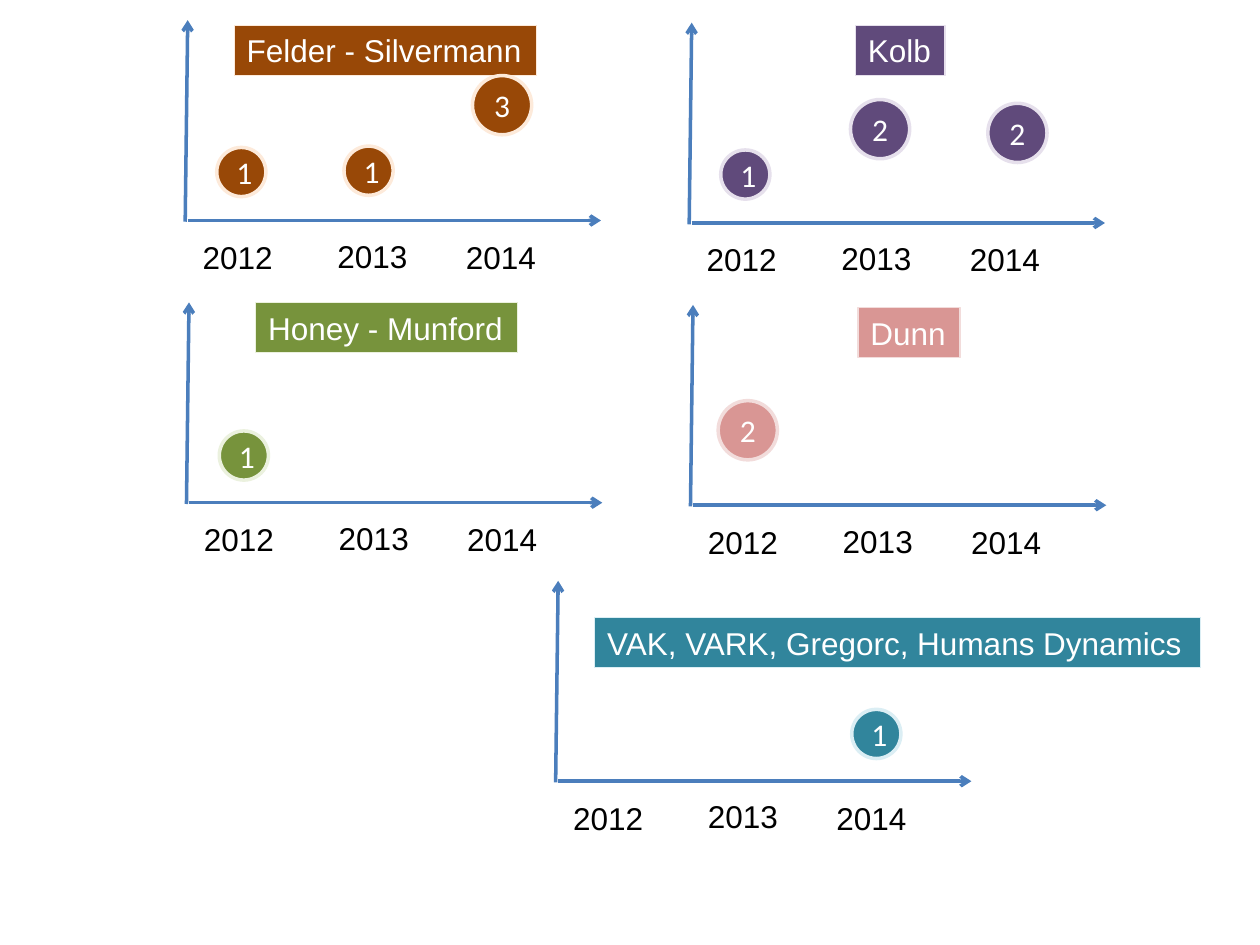
from lxml import etree
from pptx import Presentation
from pptx.dml.color import RGBColor
from pptx.enum.dml import MSO_LINE
from pptx.enum.shapes import MSO_CONNECTOR, MSO_SHAPE
from pptx.enum.text import MSO_ANCHOR, MSO_AUTO_SIZE, PP_ALIGN
from pptx.oxml.ns import qn
from pptx.util import Inches, Pt

STRAIGHT = MSO_CONNECTOR.STRAIGHT
SOLID = MSO_LINE.SOLID
RECTANGLE, OVAL = MSO_SHAPE.RECTANGLE, MSO_SHAPE.OVAL
LEFT, CENTER = PP_ALIGN.LEFT, PP_ALIGN.CENTER
TOP, MIDDLE = MSO_ANCHOR.TOP, MSO_ANCHOR.MIDDLE
GROW = MSO_AUTO_SIZE.SHAPE_TO_FIT_TEXT

AXIS_COLOR = "4B7EBC"
WHITE, BLACK = "FFFFFF", "000000"
LABEL_HEIGHT = 0.4
YEARS = [("2012", 0.04, 1.68), ("2013", 1.11, 1.67), ("2014", 2.13, 1.68)]

# Panel origin; title with its offset and width; fill, outline; bubbles (count, x, y)
PANELS = [
    ((1.47, 0.16), ("Felder - Silvermann", 0.39, 0.04, 2.4), "984807", "FDEADA",
     [(1, 0.25, 1.01), (1, 1.26, 1), (3, 2.28, 0.44)]),
    ((5.47, 0.18), ("Kolb", 1.32, 0.02, 0.71), "604A7B", "E6E0EC",
     [(1, 0.25, 1.01), (2, 1.28, 0.61), (2, 2.37, 0.64)]),
    ((1.48, 2.4), ("Honey - Munford", 0.55, 0, 2.08), "77933C", "EBF1DE",
     [(1, 0.26, 1.02)]),
    ((5.48, 2.42), ("Dunn", 1.33, 0.02, 0.81), "D99694", "F2DCDB",
     [(2, 0.22, 0.76)]),
    ((4.41, 4.61), ("VAK, VARK, Gregorc, Humans Dynamics", 0.31, 0.29, 4.81),
     "31859C", "DBEEF4", [(1, 2.35, 1.02)]),
]


def rgb(color):
    return RGBColor.from_string(color)


def write(shape, text, font_name, color, align, anchor):
    frame = shape.text_frame
    frame.text = text
    frame.vertical_anchor = anchor
    para = frame.paragraphs[0]
    para.alignment = align
    font = para.runs[0].font
    font.name, font.size = font_name, Pt(18)
    font.color.rgb = rgb(color)


def fit_to_text(shape):
    shape.text_frame.word_wrap = False
    shape.text_frame.auto_size = GROW


def add_axis(page, start, end):
    axis = page.shapes.add_connector(
        STRAIGHT, *(Inches(value) for value in (*start, *end)))
    axis.line.color.rgb = rgb(AXIS_COLOR)
    axis.line.width = Pt(2)
    axis.line.dash_style = SOLID
    outline = axis.line._get_or_add_ln()
    etree.SubElement(outline, qn("a:tailEnd"), type="arrow")
    etree.SubElement(outline.getparent(), qn("a:effectLst"))


def add_filled(page, kind, box, fill, outline, weight):
    shape = page.shapes.add_shape(kind, *(Inches(value) for value in box))
    shape.shadow.inherit = False
    shape.fill.solid()
    shape.fill.fore_color.rgb = rgb(fill)
    shape.line.color.rgb = rgb(outline)
    shape.line.width = Pt(weight)
    return shape


def add_year(page, year, left, top):
    label = page.shapes.add_textbox(
        Inches(left), Inches(top), Inches(0.76), Inches(LABEL_HEIGHT))
    write(label, year, "Arial", BLACK, LEFT, TOP)
    fit_to_text(label)


def add_panel(page, origin, title, fill, outline, bubbles):
    """Draw one model's axes, years, title and bubbles from its top-left origin."""
    left, top = origin
    add_axis(page, (left, top + 1.6), (left + 0.02, top))
    for year, x, y in YEARS:
        add_year(page, year, left + x, top + y)

    name, x, y, width = title
    heading = add_filled(page, RECTANGLE, (left + x, top + y, width, LABEL_HEIGHT),
                         fill, outline, 0.75)
    write(heading, name, "Arial", WHITE, LEFT, TOP)
    fit_to_text(heading)

    add_axis(page, (left + 0.02, top + 1.59), (left + 3.3, top + 1.59))
    for count, x, y in bubbles:
        size = 0.39 if count == 1 else 0.47
        bubble = add_filled(page, OVAL, (left + x, top + y, size, size),
                            fill, outline, 2)
        write(bubble, str(count), "Calibri", WHITE, CENTER, MIDDLE)


def main():
    deck = Presentation()
    deck.slide_width, deck.slide_height = Inches(10), Inches(7.5)
    page = deck.slides.add_slide(deck.slide_layouts[6])
    for panel in PANELS:
        add_panel(page, *panel)
    deck.save("out.pptx")


if __name__ == "__main__":
    main()
